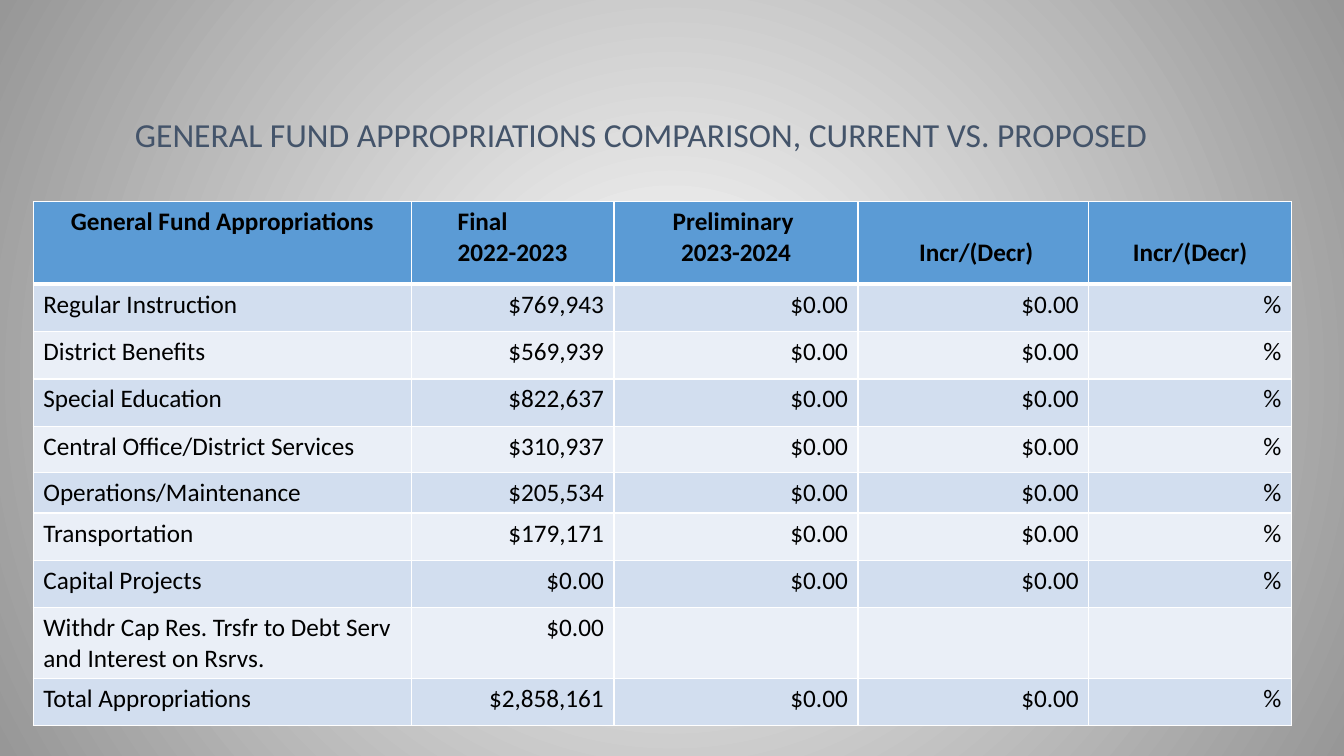
from dataclasses import dataclass

from lxml import etree
from pptx import Presentation
from pptx.dml.color import RGBColor
from pptx.enum import text
from pptx.oxml import ns
from pptx.util import Inches, Pt


@dataclass(frozen=True)
class Theme:
    font: str = "Calibri"
    title_size: int = 24
    table_size: int = 18
    title: str = "44546A"
    ink: str = "000000"
    header: str = "5B9BD5"
    bands: tuple = ("D2DEEF", "EAEFF7")
    rule: str = "FFFFFF"
    glow: str = "FFFFFF"
    edge: str = "979797"


THEME = Theme()
LEFT, CENTER, RIGHT = text.PP_ALIGN.LEFT, text.PP_ALIGN.CENTER, text.PP_ALIGN.RIGHT

TITLE = "GENERAL FUND APPROPRIATIONS COMPARISON, CURRENT VS. PROPOSED"
COL_WIDTHS = [3.75, 2.01, 2.42, 2.29, 2.01]
ROW_HEIGHTS = [0.82, 0.47, 0.47, 0.47, 0.46, 0.4, 0.47, 0.47, 0.7, 0.47]
LINE_HEIGHT = 0.31
HEADERS = [
    ["General Fund Appropriations"],
    ["Final", "2022-2023"],
    ["Preliminary ", "2023-2024"],
    [" Incr/(Decr)"],
    ["Incr/(Decr)"],
]
PROPOSED = ["$0.00", "$0.00", "%"]
APPROPRIATIONS = [
    ["Regular Instruction", "$769,943", *PROPOSED],
    ["District Benefits", "$569,939", *PROPOSED],
    ["Special Education", "$822,637", *PROPOSED],
    ["Central Office/District Services", "$310,937", *PROPOSED],
    ["Operations/Maintenance", "$205,534", *PROPOSED],
    ["Transportation", "$179,171", *PROPOSED],
    ["Capital Projects", "$0.00", *PROPOSED],
    ["Withdr Cap Res. Trsfr to Debt Serv and Interest on Rsrvs.", "$0.00", "", "", ""],
    ["Total Appropriations", "$2,858,161", *PROPOSED],
]


def write(p, words, size=THEME.table_size, color=THEME.ink, bold=False,
          align=LEFT, spacing=None, indent=0):
    p.alignment = align
    if spacing:
        p.line_spacing = spacing
    if indent:
        p._p.get_or_add_pPr().set("marL", str(Inches(indent)))
    r = p.add_run()
    r.text = words
    r.font.name, r.font.size, r.font.bold = THEME.font, Pt(size), bold
    r.font.color.rgb = RGBColor.from_string(color)


def paint_background(s):
    """Fill the slide with a circular gradient, light in the middle."""
    fill = s.background.fill
    fill.gradient()
    for stop, position, color in zip(fill.gradient_stops, (0, 1), (THEME.glow, THEME.edge)):
        stop.position = position
        stop.color.rgb = RGBColor.from_string(color)
    grad = s.element.find(".//" + ns.qn("a:gradFill"))
    for lin in grad.findall(ns.qn("a:lin")):
        grad.remove(lin)
    circle = etree.SubElement(grad, ns.qn("a:path"), path="circle")
    etree.SubElement(circle, ns.qn("a:fillToRect"), l="50000", t="50000", r="50000", b="50000")


def add_title(s):
    tf = s.shapes.add_textbox(Inches(1.24), Inches(1.04), Inches(10.5), Inches(0.54)).text_frame
    tf.word_wrap = True
    tf.vertical_anchor = text.MSO_ANCHOR.BOTTOM
    write(tf.paragraphs[0], TITLE, size=THEME.title_size, color=THEME.title, spacing=0.9)


def style_cell(cell, color, top=1, bottom=1):
    """Set borders, with top and bottom widths in points, then the fill."""
    tc_pr = cell._tc.get_or_add_tcPr()
    for side, width in (("L", 1), ("R", 1), ("T", top), ("B", bottom)):
        ln = etree.SubElement(tc_pr, ns.qn(f"a:ln{side}"), w=str(Pt(width)))
        solid = etree.SubElement(ln, ns.qn("a:solidFill"))
        etree.SubElement(solid, ns.qn("a:srgbClr"), val=THEME.rule)
    cell.fill.solid()
    cell.fill.fore_color.rgb = RGBColor.from_string(color)


def fill_header(table):
    for col, lines in enumerate(HEADERS):
        cell = table.cell(0, col)
        style_cell(cell, THEME.header, bottom=3)
        if col > 0 and len(lines) == 1:
            cell.margin_top = Inches(0.05 + LINE_HEIGHT)
        tf = cell.text_frame
        for i, line in enumerate(lines):
            p = tf.add_paragraph() if i else tf.paragraphs[0]
            place = dict(indent=0.36) if line == "Final" else dict(align=CENTER)
            write(p, line, bold=True, **place)


def fill_body(table):
    for row, values in enumerate(APPROPRIATIONS, start=1):
        for col, value in enumerate(values):
            cell = table.cell(row, col)
            style_cell(cell, THEME.bands[(row - 1) % 2], top=3 if row == 1 else 1)
            if value:
                write(cell.text_frame.paragraphs[0], value, align=RIGHT if col else LEFT)


def add_appropriations_table(s):
    table = s.shapes.add_table(
        len(ROW_HEIGHTS), len(COL_WIDTHS), Inches(0.33), Inches(2),
        Inches(sum(COL_WIDTHS)), Inches(sum(ROW_HEIGHTS))).table
    table.first_row = table.horz_banding = False
    for column, width in zip(table.columns, COL_WIDTHS):
        column.width = Inches(width)
    for row, height in zip(table.rows, ROW_HEIGHTS):
        row.height = Inches(height)
    fill_header(table)
    fill_body(table)


def main():
    prs = Presentation()
    prs.slide_width, prs.slide_height = Inches(13.33), Inches(7.5)
    s = prs.slides.add_slide(prs.slide_layouts[6])
    paint_background(s)
    add_title(s)
    add_appropriations_table(s)
    prs.save("out.pptx")


if __name__ == "__main__":
    main()
